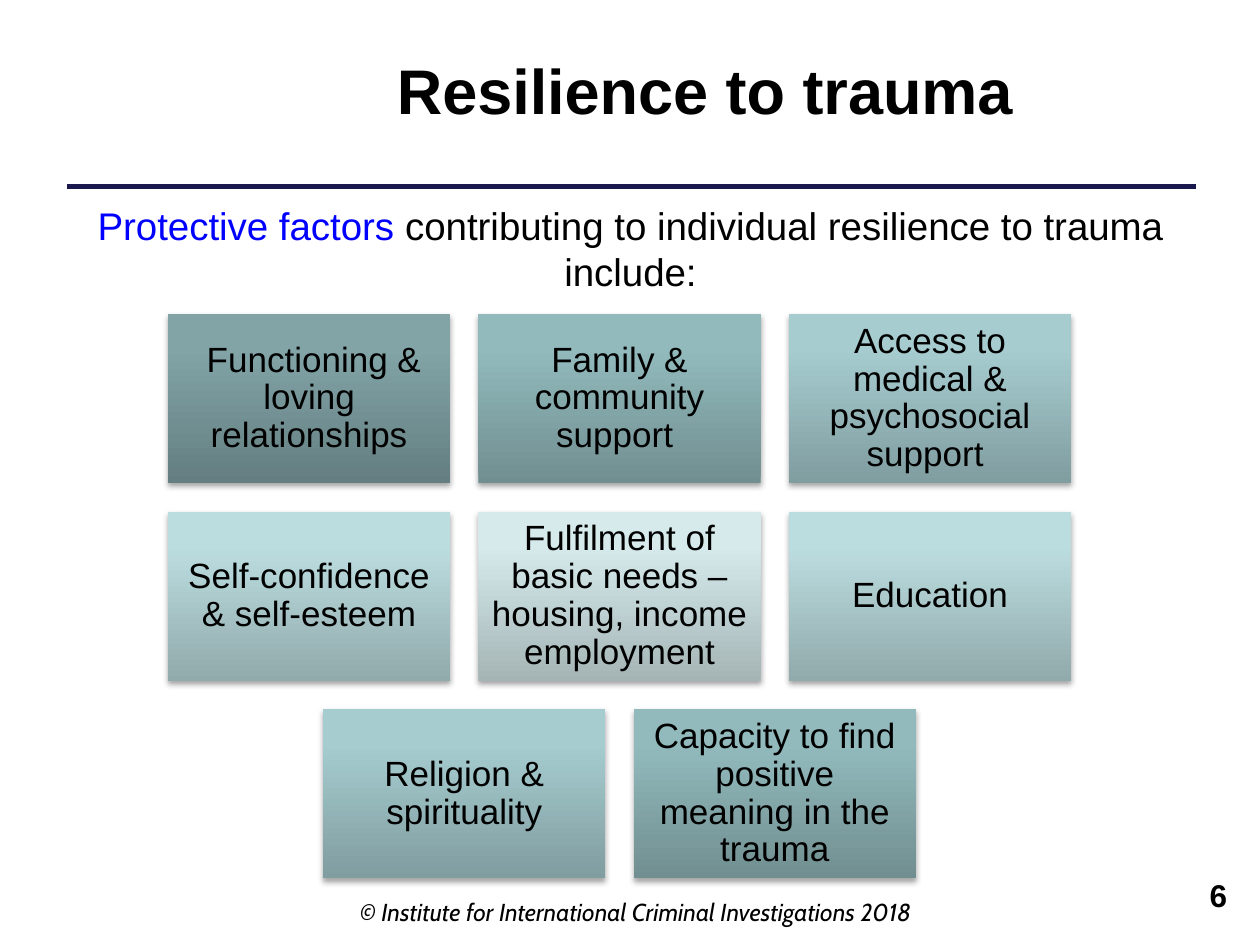
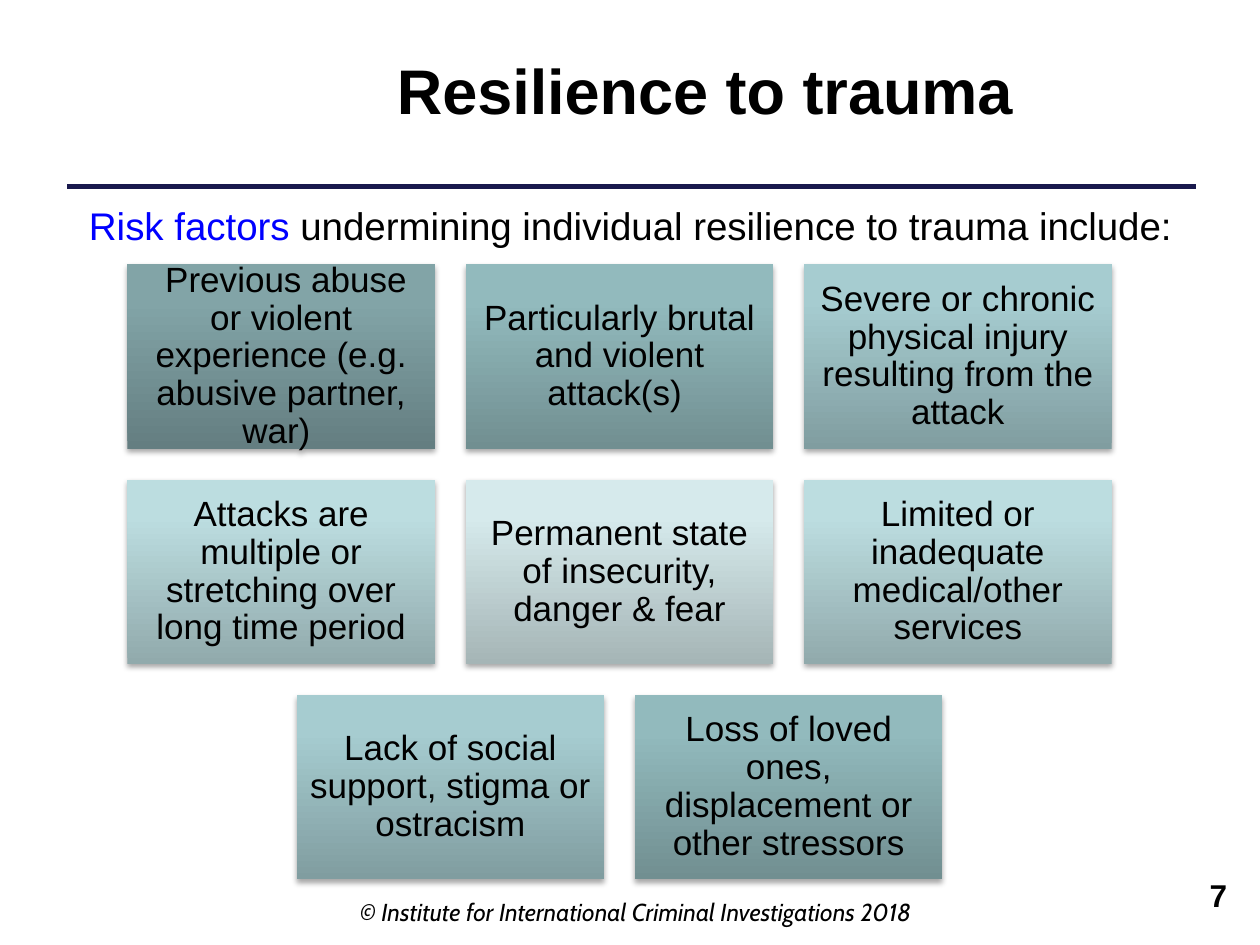
import lxml.etree
import pptx
import pptx.dml.color
import pptx.enum.shapes
import pptx.enum.text
import pptx.oxml
import pptx.oxml.ns
import pptx.util

Cm = pptx.util.Cm
ALIGN = pptx.enum.text.PP_ALIGN
ANCHOR = pptx.enum.text.MSO_ANCHOR

BLACK, BLUE, NAVY = "000000", "0000FF", "19194D"
SHADES = [
    ("647E81", "82A4A7", "82A6A9"),
    ("718F91", "92BABD", "92BBBF"),
    ("809DA0", "A6CCD0", "A6CED2"),
    ("91AAAC", "BCDDE0", "BCDEE1"),
    ("A5B5B6", "D6EAEC", "D6ECEE"),
]
STOPS = (0, 80, 100)
COLUMNS = 3
GRID_CENTRE = 12.49

PROTECTIVE_FACTORS = [
    " Functioning & loving relationships",
    "Family & community support ",
    "Access to medical & psychosocial support ",
    "Self-confidence & self-esteem",
    "Fulfilment of basic needs – housing, income employment",
    "Education",
    "Religion & spirituality",
    "Capacity to find positive meaning in the trauma",
]
RISK_FACTORS = [
    " Previous abuse or violent experience (e.g. abusive partner, war) ",
    "Particularly brutal and violent attack(s) ",
    "Severe or chronic physical injury resulting from the attack",
    "Attacks are multiple or stretching over long time period",
    "Permanent state of insecurity, danger & fear",
    "Limited or inadequate medical/other services",
    "Lack of social support, stigma or ostracism",
    "Loss of loved ones, displacement or other stressors",
]


def color(value):
    return pptx.dml.color.RGBColor.from_string(value)


def drawing_xml(body):
    return pptx.oxml.parse_xml(body.replace(">", f" {pptx.oxml.ns.nsdecls('a')}>", 1))


def place(shape, left, top, width, height):
    shape.left, shape.top = Cm(left), Cm(top)
    shape.width, shape.height = Cm(width), Cm(height)


def prepare_frame(shape, anchor=ANCHOR.TOP, align=ALIGN.CENTER):
    frame = shape.text_frame
    frame.word_wrap = True
    frame.auto_size = pptx.enum.text.MSO_AUTO_SIZE.NONE
    frame.vertical_anchor = anchor
    paragraph = frame.paragraphs[0]
    paragraph.alignment = align
    return frame, paragraph


def add_run(paragraph, text, size, font="Arial", hex_color=BLACK, bold=False, italic=False):
    run = paragraph.add_run()
    run.text = text
    run.font.name = font
    run.font.size = pptx.util.Pt(size)
    run.font.bold = bold
    run.font.italic = italic
    run.font.color.rgb = color(hex_color)


def add_title(slide, text):
    title = slide.shapes.title
    place(title, 3.71, 0.91, 21, 1.8)
    frame, paragraph = prepare_frame(title)
    add_run(paragraph, text, 36, bold=True)


def add_rule(slide):
    rule = slide.shapes.add_connector(
        pptx.enum.shapes.MSO_CONNECTOR.STRAIGHT, Cm(24.1), Cm(3.76), Cm(1.35), Cm(3.76))
    rule.line.color.rgb = color(NAVY)
    rule.line.width = pptx.util.Pt(2.5)
    properties = rule._element.spPr
    lxml.etree.SubElement(properties, pptx.oxml.ns.qn("a:effectLst"))


def add_intro(slide, keyword, rest, height):
    body = slide.placeholders[1]
    place(body, 0.71, 3.94, 24, height)
    frame, paragraph = prepare_frame(body)
    properties = paragraph._p.get_or_add_pPr()
    properties.set("marL", "0")
    properties.set("indent", "0")
    paragraph.space_before = pptx.util.Pt(0)
    properties.append(drawing_xml("<a:buNone></a:buNone>"))
    add_run(paragraph, keyword, 22, hex_color=BLUE)
    add_run(paragraph, rest, 22)


def add_text_box(slide, left, top, width, height, anchor, align):
    box = slide.shapes.add_textbox(Cm(left), Cm(top), Cm(width), Cm(height))
    return prepare_frame(box, anchor, align)


def add_footer(slide, number):
    frame, paragraph = add_text_box(slide, 6.91, 17.35, 11.81, 1.32, ANCHOR.BOTTOM, ALIGN.CENTER)
    frame.margin_bottom = 0
    add_run(paragraph, "© Institute for International Criminal Investigations 2018", 14,
            font="Cabin", italic=True)
    frame, paragraph = add_text_box(slide, 18.49, 17.53, 6.5, 1.32, ANCHOR.TOP, ALIGN.RIGHT)
    add_run(paragraph, str(number), 18, bold=True)


def shade_tile(tile, shades):
    tile.shadow.inherit = False
    tile.line.fill.background()
    stops = "".join(
        f'<a:gs pos="{position * 1000}"><a:srgbClr val="{shade}"/></a:gs>'
        for position, shade in zip(STOPS, shades))
    gradient = drawing_xml(
        f'<a:gradFill rotWithShape="1"><a:gsLst>{stops}</a:gsLst>'
        '<a:lin ang="16200000" scaled="0"/></a:gradFill>')
    properties = tile._element.spPr
    properties.find(pptx.oxml.ns.qn("a:prstGeom")).addnext(gradient)
    shadow = drawing_xml(
        '<a:outerShdw blurRad="40000" dist="23000" dir="5400000" rotWithShape="0">'
        '<a:srgbClr val="000000"><a:alpha val="35000"/></a:srgbClr></a:outerShdw>')
    properties.find(pptx.oxml.ns.qn("a:effectLst")).append(shadow)


def add_tile(slide, text, left, top, width, height, shades):
    tile = slide.shapes.add_shape(
        pptx.enum.shapes.MSO_SHAPE.RECTANGLE, Cm(left), Cm(top), Cm(width), Cm(height))
    shade_tile(tile, shades)
    frame, paragraph = prepare_frame(tile, ANCHOR.MIDDLE)
    frame.margin_left = frame.margin_right = Cm(0.2)
    frame.margin_top = frame.margin_bottom = Cm(0.2)
    paragraph.line_spacing = 0.9
    add_run(paragraph, text, 20)


def add_factor_grid(slide, factors, top, width):
    height, gap = 0.6 * width, 0.1 * width
    for index, factor in enumerate(factors):
        row, column = divmod(index, COLUMNS)
        row_count = min(COLUMNS, len(factors) - row * COLUMNS)
        row_width = row_count * (width + gap) - gap
        left = GRID_CENTRE - row_width / 2 + column * (width + gap)
        shades = SHADES[min(index, len(factors) - index)]
        add_tile(slide, factor, left, top + row * (height + gap), width, height, shades)


def add_factor_slide(presentation, number, keyword, rest, intro_height, factors, top, width):
    slide = presentation.slides.add_slide(presentation.slide_layouts[1])
    add_rule(slide)
    add_title(slide, "Resilience to trauma")
    add_intro(slide, keyword, rest, intro_height)
    add_factor_grid(slide, factors, top, width)
    add_footer(slide, number)


def main():
    presentation = pptx.Presentation()
    presentation.slide_width, presentation.slide_height = Cm(25.4), Cm(19.05)
    add_factor_slide(presentation, 6, "Protective factors ",
                     "contributing to individual resilience to trauma include:",
                     2.13, PROTECTIVE_FACTORS, 6.33, 5.69)
    add_factor_slide(presentation, 7, "Risk factors ",
                     "undermining individual resilience to trauma include:",
                     1.19, RISK_FACTORS, 5.33, 6.2)
    presentation.save("out.pptx")


if __name__ == "__main__":
    main()
